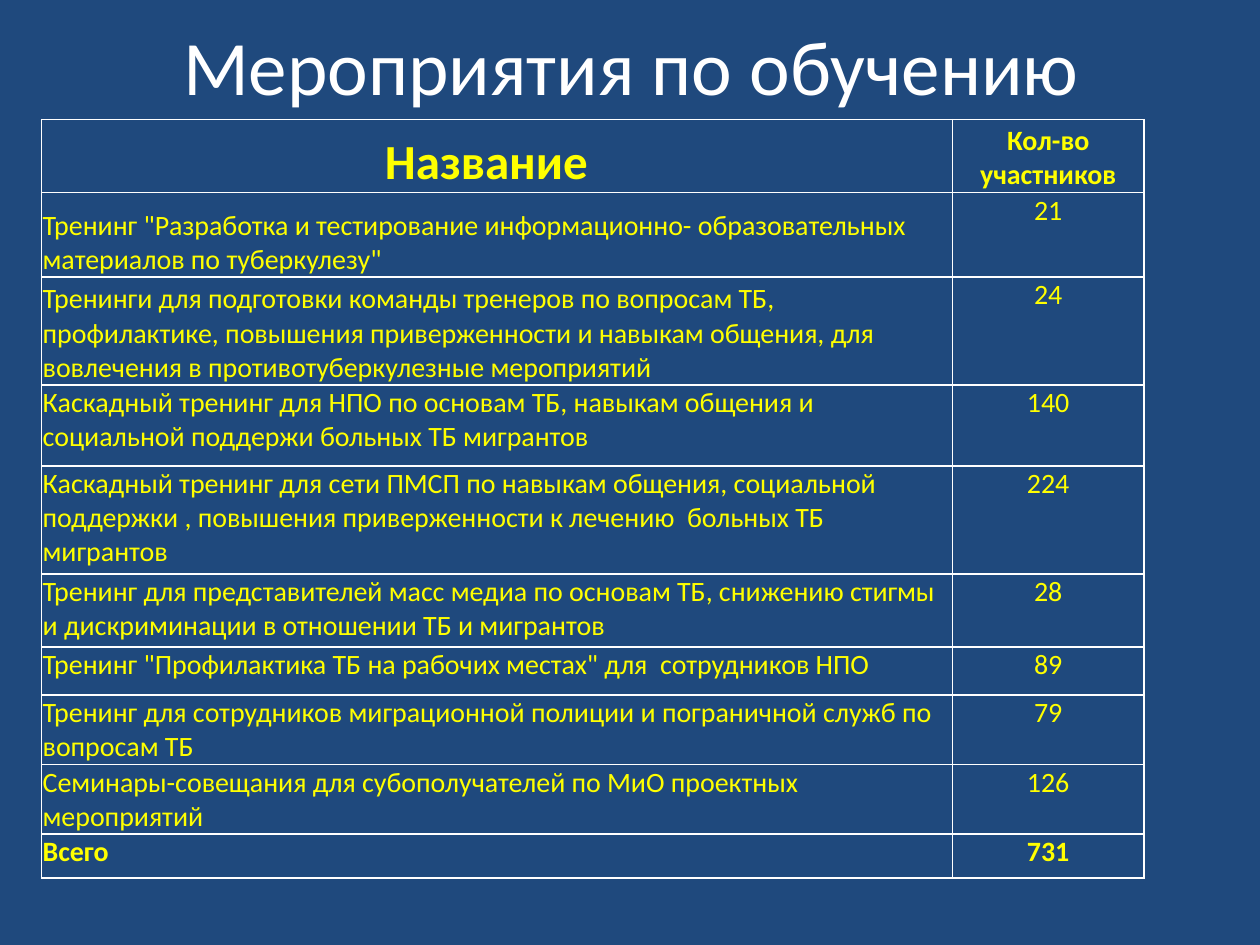
from lxml.etree import SubElement
from pptx import Presentation
from pptx.dml.color import RGBColor
from pptx.enum.text import MSO_ANCHOR as Anchor, PP_ALIGN as Align
from pptx.oxml.ns import qn
from pptx.util import Cm, Pt

NAVY, WHITE, YELLOW = "1F497D", "FFFFFF", "FFFF00"
HEADINGS = ("Название", "Кол-во участников")
TRAININGS = [
    ('Тренинг "Разработка и тестирование информационно- образовательных '
     'материалов по туберкулезу"', 21),
    ("Тренинги для подготовки команды тренеров по вопросам ТБ, профилактике, "
     "повышения приверженности и навыкам общения, для вовлечения в "
     "противотуберкулезные мероприятий", 24),
    ("Каскадный тренинг для НПО по основам ТБ, навыкам общения и социальной "
     "поддержи больных ТБ мигрантов", 140),
    ("Каскадный тренинг для сети ПМСП по навыкам общения, социальной поддержки , "
     "повышения приверженности к лечению  больных ТБ мигрантов", 224),
    ("Тренинг для представителей масс медиа по основам ТБ, снижению стигмы и "
     "дискриминации в отношении ТБ и мигрантов", 28),
    ('Тренинг "Профилактика ТБ на рабочих местах" для  сотрудников НПО', 89),
    ("Тренинг для сотрудников миграционной полиции и пограничной служб по "
     "вопросам ТБ", 79),
    ("Семинары-совещания для субополучателей по МиО проектных мероприятий", 126),
]
COLUMN_WIDTHS = (18.36, 3.86)
ROW_HEIGHTS = (1.47, 1.7, 2.18, 1.63, 2.18, 1.47, 0.97, 0.74, 0.74, 0.89)


def color(hex_value):
    return RGBColor.from_string(hex_value)


def write(frame, text, align, hex_value, **font_format):
    para = frame.paragraphs[0]
    para.alignment = align
    span = para.add_run()
    span.text = text
    span.font.color.rgb = color(hex_value)
    for name, value in {"name": "Calibri", **font_format}.items():
        setattr(span.font, name, value)


def add_title(page, text):
    title = page.shapes.title
    place = {"left": Cm(1.3), "top": Cm(0.2), "width": Cm(22.86), "height": Cm(2.21)}
    for name, value in place.items():
        setattr(title, name, value)
    title.text_frame.vertical_anchor = Anchor.MIDDLE
    write(title.text_frame, text, Align.CENTER, WHITE, size=Pt(44))


def set_borders(cell, hex_value, width):
    """Draw all four sides; must run before the cell fill is set."""
    properties = cell._tc.get_or_add_tcPr()
    for side in ("lnL", "lnR", "lnT", "lnB"):
        line = SubElement(properties, qn(f"a:{side}"), w=str(width))
        fill = SubElement(line, qn("a:solidFill"))
        SubElement(fill, qn("a:srgbClr"), val=hex_value)


def fill_cell(cell, text, align, anchor, **font_format):
    set_borders(cell, WHITE, Pt(1))
    cell.fill.background()
    layout = {"margin_left": Cm(0.02), "margin_right": Cm(0.02),
              "margin_top": Cm(0.02), "margin_bottom": 0,
              "vertical_anchor": anchor}
    for name, value in layout.items():
        setattr(cell, name, value)
    write(cell.text_frame, text, align, YELLOW, **font_format)


def add_training_table(page):
    rows = [HEADINGS, *TRAININGS, ("Всего", sum(count for _, count in TRAININGS))]
    frame = page.shapes.add_table(len(rows), 2, Cm(0.84), Cm(2.41),
                                  Cm(sum(COLUMN_WIDTHS)), Cm(sum(ROW_HEIGHTS)))
    table = frame.table
    for column, width in zip(table.columns, COLUMN_WIDTHS):
        column.width = Cm(width)
    for row, height in zip(table.rows, ROW_HEIGHTS):
        row.height = Cm(height)

    last = len(rows) - 1
    for i, row in enumerate(rows):
        for j, value in enumerate(row):
            centered = i == 0 or j == 1
            at_bottom = i == 0 or (j == 0 and i <= 2)
            fill_cell(table.cell(i, j), str(value),
                      Align.CENTER if centered else Align.LEFT,
                      Anchor.BOTTOM if at_bottom else Anchor.TOP,
                      size=Pt(28 if i == j == 0 else 16), bold=i in (0, last))
    table.cell(0, 0).margin_right = Cm(0.45)


def main():
    deck = Presentation()
    deck.slide_width, deck.slide_height = Cm(25.4), Cm(19.05)
    page = deck.slides.add_slide(deck.slide_layouts[5])
    page.background.fill.solid()
    page.background.fill.fore_color.rgb = color(NAVY)
    add_title(page, "Мероприятия по обучению")
    add_training_table(page)
    deck.save("out.pptx")


if __name__ == "__main__":
    main()
